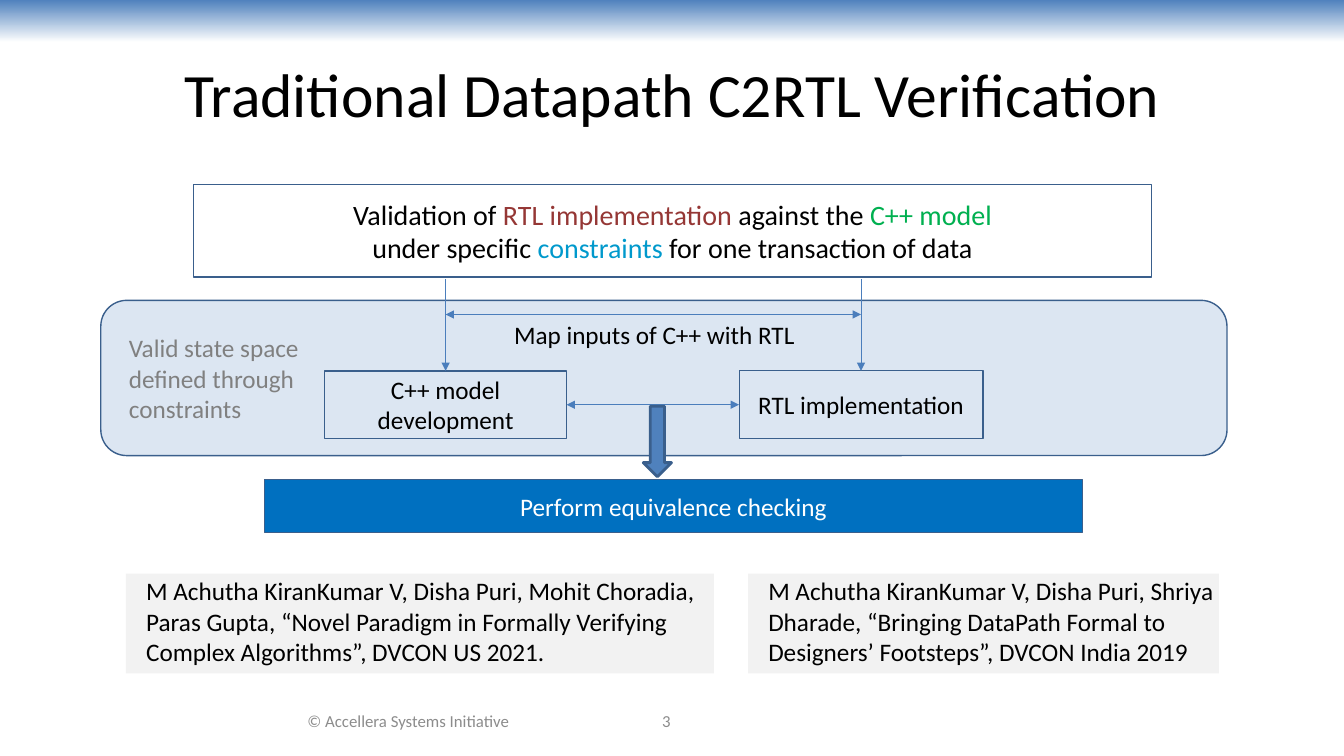
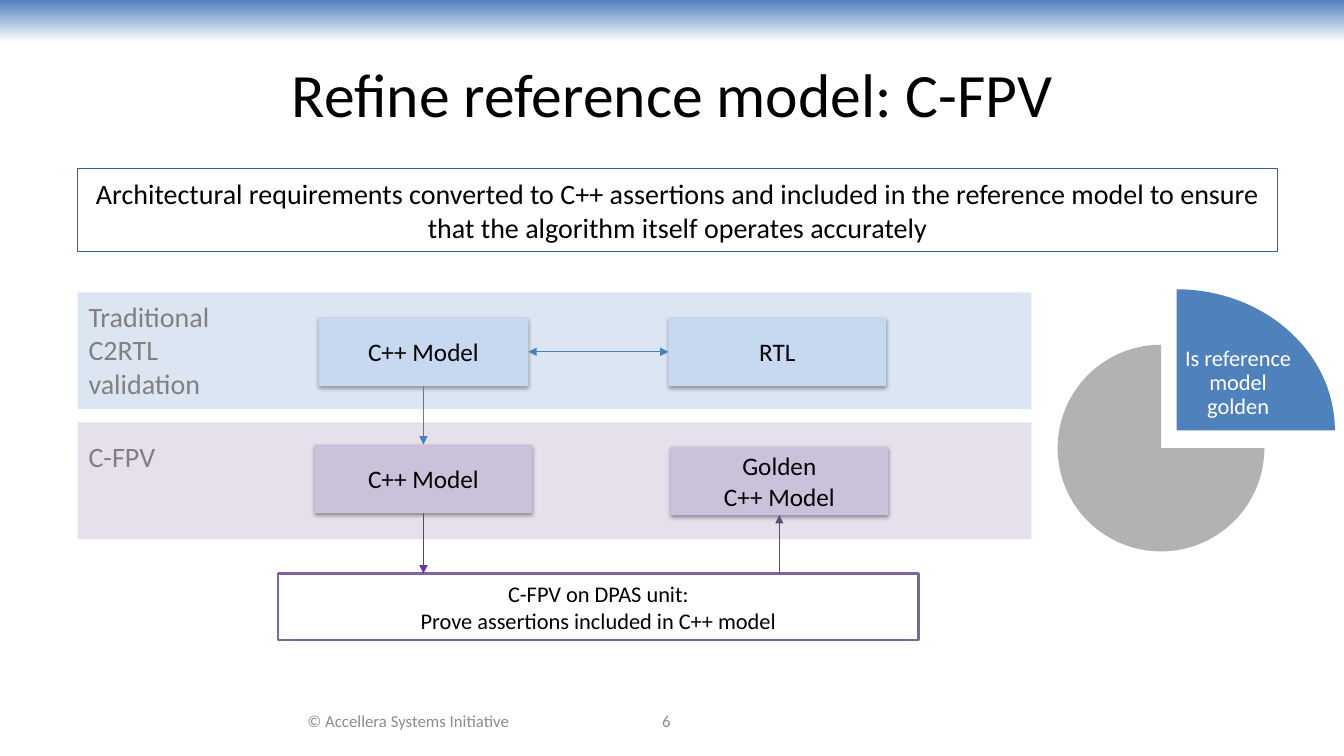
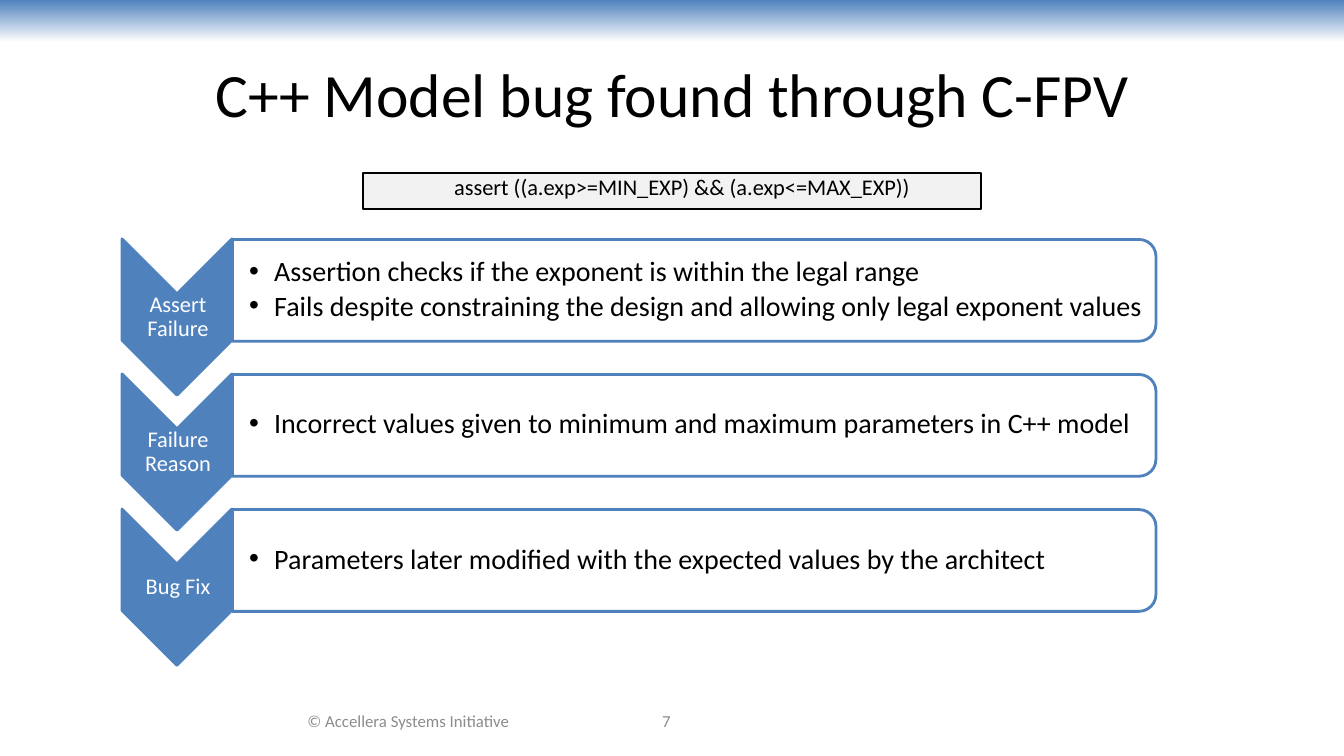
from dataclasses import dataclass, field
from typing import NamedTuple, Optional, Union

from lxml import etree
from pptx import Presentation
from pptx import util as u
from pptx.dml.color import RGBColor
from pptx.enum import shapes, text
from pptx.oxml import ns

KIND = shapes.MSO_SHAPE
TOP, LEFT, BOTTOM, RIGHT = range(4)


@dataclass(frozen=True)
class Theme:
    font: str = "Calibri"
    title_size: int = 44
    lead_size: int = 20
    text_size: int = 18
    small_size: int = 16
    footer_size: int = 12
    black: str = "000000"
    white: str = "FFFFFF"
    grey: str = "808080"
    footer_grey: str = "8C8C8C"
    slice_grey: str = "B2B2B2"
    pale_grey: str = "F2F2F2"
    accent: str = "4F81BD"
    outline: str = "3A5F8C"
    arrow: str = "4B7EBC"
    pale_blue: str = "DCE6F2"
    light_blue: str = "C6D9F1"
    strong_blue: str = "0070C0"
    cyan: str = "0099CC"
    red: str = "953735"
    green: str = "00B050"
    pale_violet: str = "E6E0EC"
    light_violet: str = "CCC1DA"
    violet: str = "8064A2"
    dark_violet: str = "604A7B"
    bright_violet: str = "7030A0"


THEME = Theme()


class Box(NamedTuple):
    left: float
    top: float
    width: float
    height: float

    def inches(self) -> list:
        return [u.Inches(value) for value in self]

    def side(self, site: int) -> tuple:
        """Middle of one side: 0 top, 1 left, 2 bottom, 3 right."""
        across = (0.5, 0, 0.5, 1)[site]
        down = (0, 0.5, 1, 0.5)[site]
        return self.left + across * self.width, self.top + down * self.height


class Run(NamedTuple):
    words: str
    color: str


Line = Union[str, list]


@dataclass(frozen=True)
class TextStyle:
    size: int = THEME.text_size
    color: str = THEME.black
    align: text.PP_ALIGN = text.PP_ALIGN.CENTER
    anchor: text.MSO_ANCHOR = text.MSO_ANCHOR.MIDDLE
    inset: tuple = (0.1, 0.05, 0.1, 0.05)
    line_spacing: float = 1
    space_after: float = 0
    bullet: Optional[str] = None


CENTERED = TextStyle()
LEAD = TextStyle(THEME.lead_size)
SMALL = TextStyle(THEME.small_size)
ON_BLUE = TextStyle(color=THEME.white)
PLAIN = TextStyle(align=text.PP_ALIGN.LEFT, anchor=text.MSO_ANCHOR.TOP)
CAPTION = TextStyle(color=THEME.grey, align=text.PP_ALIGN.LEFT, anchor=text.MSO_ANCHOR.TOP)
LANE_NAME = TextStyle(THEME.lead_size, THEME.grey, text.PP_ALIGN.LEFT, text.MSO_ANCHOR.TOP)
CITATION = TextStyle(align=text.PP_ALIGN.LEFT, anchor=text.MSO_ANCHOR.TOP, inset=(0.2, 0.02, 0, 0))
CODE = TextStyle(THEME.small_size, anchor=text.MSO_ANCHOR.TOP, inset=(0.2, 0, 0, 0))
LABEL = TextStyle(THEME.small_size, THEME.white, inset=(0.01,) * 4, line_spacing=0.9)
BULLETS = TextStyle(THEME.lead_size, align=text.PP_ALIGN.LEFT, inset=(0.16, 0.01, 0.01, 0.01),
                    line_spacing=0.9, space_after=3, bullet="•")
TITLE = TextStyle(THEME.title_size)
FOOTER = TextStyle(THEME.footer_size, THEME.footer_grey)


@dataclass(frozen=True)
class Panel:
    box: Box
    lines: list = field(default_factory=list)
    style: TextStyle = CENTERED
    fill: Optional[str] = None
    line: Optional[str] = None
    weight: float = 0.75
    kind: KIND = KIND.RECTANGLE
    rotation: float = 0
    angles: tuple = ()
    shadow: bool = False


class Side(NamedTuple):
    """A connection site of a drawn panel."""
    shape: object
    box: Box
    site: int


class Point(NamedTuple):
    x: float
    y: float


def rgb(color: str) -> RGBColor:
    return RGBColor.from_string(color)


def set_bullet(paragraph, character: str) -> None:
    properties = paragraph._p.get_or_add_pPr()
    properties.set("marL", str(u.Inches(0.25)))
    properties.set("indent", str(u.Inches(-0.25)))
    bullet_font = etree.SubElement(properties, ns.qn("a:buFont"))
    bullet_font.set("typeface", "Arial")
    etree.SubElement(properties, ns.qn("a:buChar")).set("char", character)


def write(frame, lines: list, style: TextStyle) -> None:
    frame.word_wrap = True
    frame.auto_size = text.MSO_AUTO_SIZE.NONE
    frame.vertical_anchor = style.anchor
    (frame.margin_left, frame.margin_top,
     frame.margin_right, frame.margin_bottom) = map(u.Inches, style.inset)
    for index, line in enumerate(lines):
        paragraph = frame.add_paragraph() if index else frame.paragraphs[0]
        if style.bullet:
            set_bullet(paragraph, style.bullet)
        paragraph.alignment = style.align
        paragraph.line_spacing = style.line_spacing
        paragraph.space_before = u.Pt(0)
        paragraph.space_after = u.Pt(style.space_after)
        for part in [Run(line, style.color)] if isinstance(line, str) else line:
            run = paragraph.add_run()
            run.text = part.words
            run.font.name = THEME.font
            run.font.size = u.Pt(style.size)
            run.font.bold = False
            run.font.color.rgb = rgb(part.color)


def add_words(slide, box: Box, lines: list, style: TextStyle) -> None:
    write(slide.shapes.add_textbox(*box.inches()).text_frame, lines, style)


def cast_shadow(shape) -> None:
    effects = shape.element.spPr.find(ns.qn("a:effectLst"))
    shadow = etree.SubElement(effects, ns.qn("a:outerShdw"), blurRad="40000", dist="20000",
                              dir="5400000", rotWithShape="0")
    color = etree.SubElement(shadow, ns.qn("a:srgbClr"), val=THEME.black)
    etree.SubElement(color, ns.qn("a:alpha"), val="38000")


def add_panel(slide, panel: Panel):
    shape = slide.shapes.add_shape(panel.kind, *panel.box.inches())
    shape.rotation = panel.rotation
    for index, angle in enumerate(panel.angles):
        shape.adjustments[index] = angle
    if panel.fill:
        shape.fill.solid()
        shape.fill.fore_color.rgb = rgb(panel.fill)
    else:
        shape.fill.background()
    if panel.line:
        shape.line.color.rgb = rgb(panel.line)
        shape.line.width = u.Pt(panel.weight)
    else:
        shape.line.fill.background()
    shape.shadow.inherit = False
    if panel.shadow:
        cast_shadow(shape)
    if panel.lines:
        write(shape.text_frame, panel.lines, panel.style)
    return shape


def add_node(slide, panel: Panel):
    """Draw a panel and return a function giving its connection sites."""
    shape = add_panel(slide, panel)
    return lambda site: Side(shape, panel.box, site)


def add_arrow(slide, start: Union[Side, Point], end: Union[Side, Point],
              color: str = THEME.arrow, two_way: bool = False) -> None:
    ends = [p.box.side(p.site) if isinstance(p, Side) else p for p in (start, end)]
    arrow = slide.shapes.add_connector(shapes.MSO_CONNECTOR.STRAIGHT,
                                       *[u.Inches(value) for point in ends for value in point])
    if isinstance(start, Side):
        arrow.begin_connect(start.shape, start.site)
    if isinstance(end, Side):
        arrow.end_connect(end.shape, end.site)
    arrow.line.color.rgb = rgb(color)
    arrow.line.width = u.Pt(0.75)
    outline = arrow.line._get_or_add_ln()
    for tag in ("a:headEnd", "a:tailEnd") if two_way else ("a:tailEnd",):
        etree.SubElement(outline, ns.qn(tag), type="triangle")
    etree.SubElement(arrow.element.spPr, ns.qn("a:effectLst"))


def add_master_band(prs, slide) -> None:
    """Draw the gradient band, then hand it over to the slide master."""
    band = slide.shapes.add_shape(KIND.RECTANGLE, *Box(0, 0, 13.33, 0.42).inches())
    band.fill.gradient()
    band.fill.gradient_angle = 270
    for stop, color in zip(band.fill.gradient_stops, (THEME.accent, THEME.white)):
        stop.color.rgb = rgb(color)
    band.line.fill.background()
    band.shadow.inherit = False
    band.element.nvSpPr.cNvPr.id = 90
    prs.slide_master.shapes.element.insert(2, band.element)


def place(placeholder, box: Box) -> None:
    (placeholder.left, placeholder.top,
     placeholder.width, placeholder.height) = box.inches()


def add_slide(prs, layout_name: str, title: str, number: int):
    slide = prs.slides.add_slide(prs.slide_layouts.get_by_name(layout_name))
    place(slide.shapes.title, Box(0.67, 0.3, 12, 1.25))
    write(slide.shapes.title.text_frame, [title], TITLE)
    add_words(slide, Box(2.44, 6.95, 3.22, 0.4), ["© Accellera Systems Initiative"], FOOTER)
    add_words(slide, Box(5.33, 6.95, 2.56, 0.4), [str(number)], FOOTER)
    return slide


def build_traditional(prs):
    slide = add_slide(prs, "Title Only", "Traditional Datapath C2RTL Verification", 3)
    add_panel(slide, Panel(Box(1, 2.98, 11.17, 1.54), fill=THEME.pale_blue,
                           line=THEME.outline, weight=1, kind=KIND.ROUNDED_RECTANGLE))
    add_words(slide, Box(1.18, 3.25, 2.03, 1.01),
              ["Valid state space", "defined through constraints"], CAPTION)
    goal = [
        [Run("Validation of ", THEME.black), Run("RTL implementation ", THEME.red),
         Run("against the ", THEME.black), Run("C++ model", THEME.green)],
        [Run("under specific ", THEME.black), Run("constraints ", THEME.cyan),
         Run("for one transaction of data", THEME.black)],
    ]
    add_panel(slide, Panel(Box(1.92, 1.83, 9.5, 0.92), goal, LEAD, line=THEME.outline, weight=1))
    model = add_node(slide, Panel(Box(3.22, 3.68, 2.4, 0.67), ["C++ model development"],
                                  line=THEME.outline, weight=1))
    rtl = add_node(slide, Panel(Box(7.33, 3.68, 2.42, 0.67), ["RTL implementation"],
                                line=THEME.outline))
    for node, x in ((model, 4.42), (rtl, 8.54)):
        add_arrow(slide, Point(x, 2.77), node(TOP))
    add_arrow(slide, Point(4.42, 3.12), Point(8.54, 3.12), two_way=True)
    add_words(slide, Box(5, 3.12, 3.17, 0.4), ["Map inputs of C++ with RTL"], PLAIN)
    add_arrow(slide, model(RIGHT), rtl(LEFT), two_way=True)
    add_panel(slide, Panel(Box(6.38, 4.03, 0.28, 0.7), fill=THEME.accent, line=THEME.outline,
                           weight=2, kind=KIND.DOWN_ARROW))
    add_panel(slide, Panel(Box(2.62, 4.76, 8.12, 0.52), ["Perform equivalence checking"],
                           ON_BLUE, THEME.strong_blue, THEME.outline))
    citations = (
        (1.25, 5.83, "M Achutha KiranKumar V, Disha Puri, Mohit Choradia, Paras Gupta, "
                     "“Novel Paradigm in Formally Verifying Complex Algorithms”, DVCON US 2021."),
        (7.42, 4.67, "M Achutha KiranKumar V, Disha Puri, Shriya Dharade, "
                     "“Bringing DataPath Formal to Designers’ Footsteps”, DVCON India 2019"),
    )
    for left, width, citation in citations:
        add_panel(slide, Panel(Box(left, 5.69, width, 0.99), [citation], CITATION,
                               THEME.pale_grey))
    return slide


def build_refinement(prs) -> None:
    slide = add_slide(prs, "Title Only", "Refine reference model: C-FPV", 6)
    requirement = ("Architectural requirements converted to C++ assertions and included in the "
                   "reference model to ensure that the algorithm itself operates accurately")
    add_panel(slide, Panel(Box(0.77, 1.67, 11.9, 0.83), [requirement], LEAD, line=THEME.outline))
    lanes = (
        (2.9, THEME.pale_blue, Box(0.78, 2.92, 2, 1.11), "Traditional C2RTL validation"),
        (4.19, THEME.pale_violet, Box(0.78, 4.31, 2, 0.44), "C-FPV"),
    )
    for top, color, name_box, name in lanes:
        add_panel(slide, Panel(Box(0.77, top, 9.46, 1.16), fill=color))
        add_words(slide, name_box, [name], LANE_NAME)

    steps = (
        (Box(3.16, 3.15, 2.08, 0.68), ["C++ Model"], THEME.light_blue),
        (Box(6.63, 3.15, 2.16, 0.68), ["RTL"], THEME.light_blue),
        (Box(3.12, 4.41, 2.16, 0.68), ["C++ Model"], THEME.light_violet),
        (Box(6.65, 4.43, 2.16, 0.68), ["Golden", "C++ Model"], THEME.light_violet),
    )
    model, rtl, checked_model, golden_model = [
        add_node(slide, Panel(box, lines, fill=color, shadow=True)) for box, lines, color in steps]
    add_panel(slide, Panel(Box(2.76, 5.69, 6.35, 0.66),
                           ["C-FPV on DPAS unit:", "Prove assertions included in C++ model"],
                           SMALL, THEME.white, THEME.violet, 1.5))
    add_arrow(slide, model(RIGHT), rtl(LEFT), two_way=True)
    add_arrow(slide, model(BOTTOM), checked_model(TOP))
    add_arrow(slide, checked_model(BOTTOM), Point(4.2, 5.69), THEME.bright_violet)
    add_arrow(slide, Point(7.73, 5.69), golden_model(BOTTOM), THEME.dark_violet)

    add_panel(slide, Panel(Box(10.1, 2.87, 3.14, 2.8), fill=THEME.accent, kind=KIND.PIE,
                           angles=(162, 0)))
    add_words(slide, Box(11.7, 3.39, 1.16, 0.83), ["Is reference model golden"], LABEL)
    quarter = 54
    for start in range(0, 3 * quarter, quarter):
        add_panel(slide, Panel(Box(10.49, 3.42, 2.05, 2.05), fill=THEME.slice_grey,
                               kind=KIND.PIE, angles=(start, start + quarter)))


def build_bug(prs) -> None:
    slide = add_slide(prs, "Comparison", "C++ Model bug found through C-FPV", 7)
    add_panel(slide, Panel(Box(3.6, 1.72, 6.13, 0.35),
                           ["assert ((a.exp>=MIN_EXP) && (a.exp<=MAX_EXP))"],
                           CODE, THEME.pale_grey, THEME.black, 1.5))
    stages = (
        ("Assert Failure", ["Assertion checks if the exponent is within the legal range",
                            "Fails despite constraining the design and allowing only legal "
                            "exponent values"]),
        ("Failure Reason", ["Incorrect values given to minimum and maximum parameters "
                            "in C++ model"]),
        ("Bug Fix", ["Parameters later modified with the expected values by the architect"]),
    )
    bodies = [holder for holder in slide.placeholders if holder.placeholder_format.idx > 0]
    for index, ((stage, findings), body) in enumerate(zip(stages, bodies)):
        drop = 1.34 * index
        add_panel(slide, Panel(Box(0.98, 2.6 + drop, 1.55, 1.09), fill=THEME.accent,
                               line=THEME.accent, weight=2, kind=KIND.CHEVRON, rotation=90))
        add_words(slide, Box(1.22, 2.91 + drop, 1.09, 0.47), [stage], LABEL)
        add_panel(slide, Panel(Box(6.38, -1.7 + drop, 1.01, 9.16), fill=THEME.white,
                               line=THEME.accent, weight=2, kind=KIND.ROUND_2_SAME_RECTANGLE,
                               rotation=90))
        place(body, Box(2.31, 2.42 + drop, 9.11, 0.91))
        write(body.text_frame, findings, BULLETS)
        slide.shapes.element.append(body.element)
    for unused in bodies[len(stages):]:
        slide.shapes.element.remove(unused.element)


def main() -> None:
    prs = Presentation()
    prs.slide_width, prs.slide_height = u.Inches(13.33), u.Inches(7.5)
    first = build_traditional(prs)
    add_master_band(prs, first)
    build_refinement(prs)
    build_bug(prs)
    prs.save("out.pptx")


if __name__ == "__main__":
    main()
